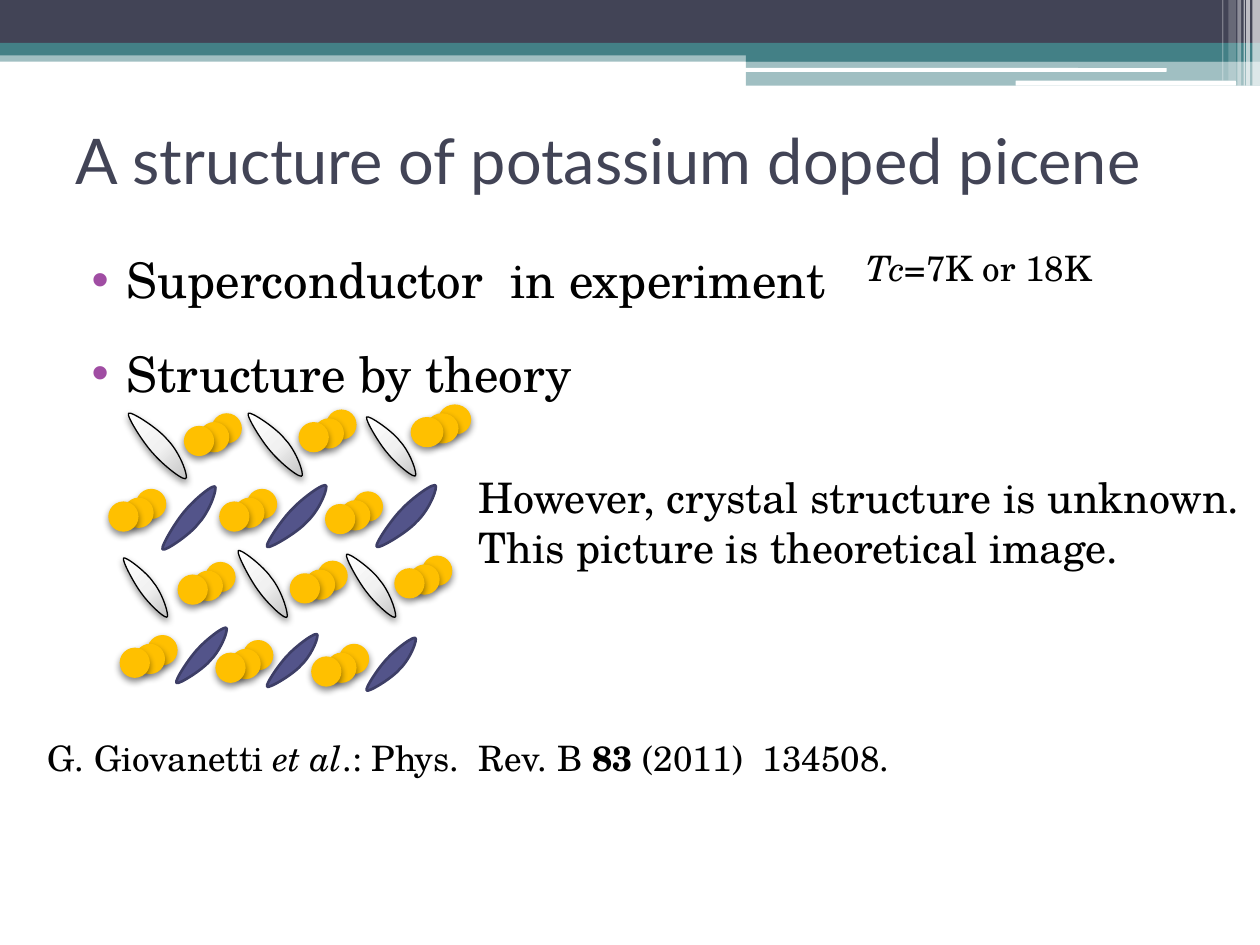
"""Builds a slide on the layered structure of potassium doped picene."""
from lxml import etree
from pptx import Presentation, util as u
from pptx.dml.color import RGBColor
from pptx.enum import shapes, text
from pptx.oxml import parse_xml
from pptx.oxml.ns import nsdecls, qn

COLORS = {"navy": "424456", "teal": "438086", "white": "FFFFFF", "black": "000000",
          "indigo": "53548A", "edge": "3D3E66", "gold": "FFC000", "bullet": "A04DA3"}
SERIF = "TeX Gyre Schola"
RECT = shapes.MSO_SHAPE.RECTANGLE
ROUND = shapes.MSO_SHAPE.ROUNDED_RECTANGLE

BANDS = [
    (RECT, (0, 0.4, 10, 0.09), "teal", 50),
    (RECT, (0, 0, 10, 0.34), "navy", 100),
    (RECT, (0, 0.34, 10, 0.1), "teal", 100),
    (RECT, (5.92, 0.39, 4.08, 0.1), "teal", 100),
    (RECT, (5.92, 0.48, 4.08, 0.2), "teal", 50),
    (ROUND, (5.91, 0.54, 3.35, 0.03), "white", 100),
    (ROUND, (8.06, 0.64, 1.75, 0.04), "white", 100),
] + [(RECT, (left, 0, width, height), "white", alpha) for left, width, height, alpha in [
    (9.94, 0.06, 0.68, 65), (9.89, 0.03, 0.68, 65), (9.87, 0.01, 0.68, 60),
    (9.82, 0.03, 0.68, 40), (9.75, 0.06, 0.64, 20), (9.7, 0.01, 0.64, 30)]]

TITLE = "A structure of potassium doped picene"
BULLETS = [[("Superconductor  in experiment", "")], [("Structure by theory", "")]]
REMARK = [[("However, crystal structure is unknown.", "")],
          [("This picture is theoretical image.", "")]]
TEMPERATURE = [[("Tc", "i"), ("=7K or 18K", "")]]
CITATION = [[("G. Giovanetti ", ""), ("et al", "i"), (".: Phys.  Rev. B ", ""),
             ("83", "b"), (" (2011)  134508.", "")]]

LEAVES = [(1.4, 4.99, 0.4, 0.43, "dark"), (2.12, 5.04, 0.4, 0.41, "dark"),
          (0.98, 4.43, 0.35, 0.46, "light"), (2.91, 5.07, 0.39, 0.41, "dark"),
          (1.89, 4.37, 0.39, 0.52, "light"), (2.75, 4.4, 0.39, 0.49, "light"),
          (1.29, 3.87, 0.42, 0.49, "dark"), (2.12, 3.86, 0.47, 0.48, "dark"),
          (1.02, 3.28, 0.46, 0.51, "light"), (2.99, 3.86, 0.47, 0.48, "dark"),
          (1.97, 3.28, 0.43, 0.49, "light"), (2.91, 3.31, 0.39, 0.46, "light")]
LEAF_START = (0, 0)
LEAF_CURVES = [[(0.04, -0.04), (0.52, 0.24), (0.67, 0.41)],
               [(0.85, 0.57), (1, 0.88), (1, 1)],
               [(1, 1.1), (0.59, 0.8), (0.43, 0.63)],
               [(0.26, 0.47), (-0.04, 0.04), LEAF_START]]

ATOM = 0.24
ATOM_OFFSETS = [(0.22, -0.1), (0.12, -0.03), (0, 0)]
CLUSTERS = [(0.95, 5.14, ATOM), (1.71, 5.18, ATOM), (2.47, 5.21, ATOM),
            (1.41, 4.56, ATOM), (2.3, 4.55, ATOM), (3.13, 4.51, ATOM),
            (0.86, 3.98, ATOM), (1.74, 3.98, ATOM), (2.58, 4, ATOM),
            (1.46, 3.38, ATOM), (2.37, 3.35, ATOM), (3.26, 3.31, 0.26)]


def rgb(name):
    return RGBColor.from_string(COLORS[name])


def inches(values):
    return [u.Inches(value) for value in values]


def paint(shape, color, alpha=100):
    shape.shadow.inherit = False
    shape.fill.solid()
    shape.fill.fore_color.rgb = rgb(color)
    shape.line.fill.background()
    if alpha < 100:
        tint = shape.fill._xPr.find(qn("a:solidFill"))[0]
        etree.SubElement(tint, qn("a:alpha"), val=str(alpha * 1000))


def cast_shadow(shape, alpha, blur):
    effects = shape._element.spPr.find(qn("a:effectLst"))
    effects.append(parse_xml(
        f'<a:outerShdw {nsdecls("a")} blurRad="{u.Pt(blur)}" dist="{u.Pt(2)}" dir="5400000" '
        f'rotWithShape="0"><a:srgbClr val="{COLORS["black"]}">'
        f'<a:alpha val="{alpha * 1000}"/></a:srgbClr></a:outerShdw>'))


def shade(shape):
    stops = "".join(f'<a:gs pos="{place * 1000}"><a:srgbClr val="{color}"/></a:gs>'
                    for place, color in [(0, "FEFEFE"), (55, "F1F1F1"), (100, "C5C5C5")])
    properties = shape._element.spPr
    properties.replace(properties.find(qn("a:solidFill")), parse_xml(
        f'<a:gradFill {nsdecls("a")} rotWithShape="1"><a:gsLst>{stops}</a:gsLst>'
        '<a:path path="circle"><a:fillToRect l="-40000" t="-90000" r="140000" b="190000"/>'
        '</a:path></a:gradFill>'))


def add_leaf(page, left, top, width, height, tone):
    dark = tone == "dark"

    def locate(point):
        x, y = point
        return inches((x * width, (1 - y if dark else y) * height))

    builder = page.shapes.build_freeform(*locate(LEAF_START))
    builder.add_line_segments([locate(curve[-1]) for curve in LEAF_CURVES], close=True)
    leaf = builder.convert_to_shape(*inches((left, top)))
    sides = list(leaf._element.spPr.iter(qn("a:lnTo")))
    for side, curve in zip(sides, LEAF_CURVES):
        bend = etree.Element(qn("a:cubicBezTo"))
        for x, y in map(locate, curve):
            etree.SubElement(bend, qn("a:pt"), x=str(x), y=str(y))
        side.getparent().replace(side, bend)
    paint(leaf, "indigo" if dark else "white")
    leaf.line.color.rgb = rgb("edge" if dark else "black")
    leaf.line.width = u.Pt(1.5 if dark else 0.75)
    if not dark:
        shade(leaf)
        cast_shadow(leaf, 40, 4.1)


def add_text(page, place, lines, size, grow=True):
    box = page.shapes.add_textbox(*inches(place))
    frame = box.text_frame
    frame.word_wrap = True
    if grow:
        frame.auto_size = text.MSO_AUTO_SIZE.SHAPE_TO_FIT_TEXT
    for index, line in enumerate(lines):
        para = frame.paragraphs[0] if index == 0 else frame.add_paragraph()
        para.font.name, para.font.size = SERIF, u.Pt(size)
        para.font.color.rgb = rgb("black")
        for words, style in line:
            span = para.add_run()
            span.text = words
            if style:
                span.font.italic, span.font.bold = style == "i", style == "b"
    return box


def add_bullet(para):
    para.line_spacing, para.space_before = 1.5, u.Pt(3)
    properties = para._p.get_or_add_pPr()
    properties.set("marL", str(u.Inches(0.4)))
    properties.set("indent", str(u.Inches(-0.28)))
    marks = [f'<a:buClr {nsdecls("a")}><a:srgbClr val="{COLORS["bullet"]}"/></a:buClr>',
             f'<a:buFont {nsdecls("a")} typeface="Arial"/>',
             f'<a:buChar {nsdecls("a")} char="•"/>']
    for mark in marks:
        properties.find(qn("a:defRPr")).addprevious(parse_xml(mark))


def main():
    deck = Presentation()
    deck.slide_width, deck.slide_height = inches((10, 7.5))
    page = deck.slides.add_slide(deck.slide_layouts[5])

    for kind, place, color, alpha in BANDS:
        paint(page.shapes.add_shape(kind, *inches(place)), color, alpha)

    title = page.shapes.title
    page.shapes._spTree.append(title._element)
    title.left, title.top, title.width, title.height = inches((0.5, 0.68, 9, 1.17))
    title.text_frame.text = TITLE
    title.text_frame.vertical_anchor = text.MSO_ANCHOR.MIDDLE
    para = title.text_frame.paragraphs[0]
    para.alignment = text.PP_ALIGN.LEFT
    para.font.name, para.font.size = "Lato", u.Pt(36)
    para.font.color.rgb = rgb("navy")

    for leaf in LEAVES:
        add_leaf(page, *leaf)
    add_text(page, (0.28, 5.8, 7.87, 0.44), CITATION, 20)

    for left, top, width in CLUSTERS:
        for right, down in ATOM_OFFSETS:
            atom = page.shapes.add_shape(shapes.MSO_SHAPE.OVAL,
                                         *inches((left + right, top + down, width, ATOM)))
            paint(atom, "gold")
            cast_shadow(atom, 45, 4)

    add_text(page, (6.78, 1.91, 2.24, 0.44), TEMPERATURE, 20)
    points = add_text(page, (0.51, 1.7, 9, 1.54), BULLETS, 28, grow=False)
    for para in points.text_frame.paragraphs:
        add_bullet(para)
    add_text(page, (3.7, 3.69, 6.32, 0.91), REMARK, 24)
    deck.save("out.pptx")


if __name__ == "__main__":
    main()
